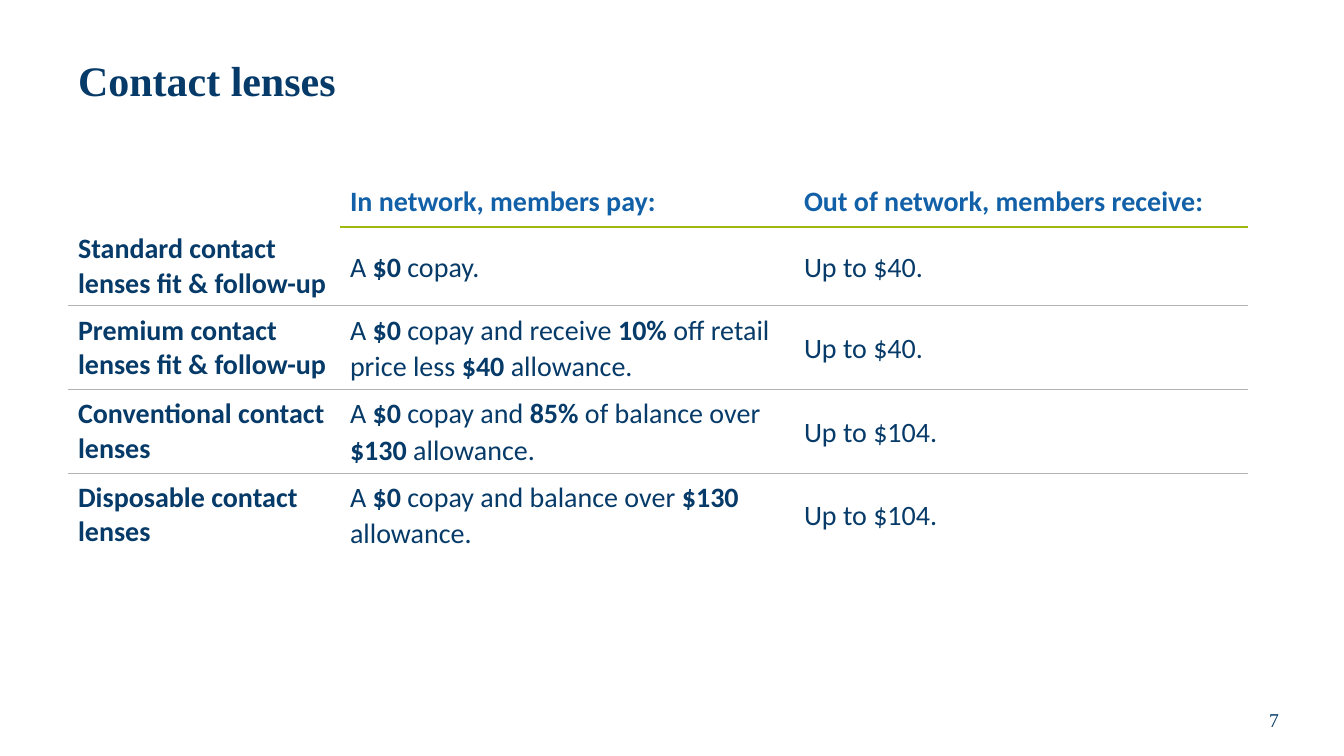
from lxml.etree import SubElement
from pptx import Presentation
from pptx.dml.color import RGBColor
from pptx.enum.text import MSO_ANCHOR as Anchor, PP_ALIGN as Align
from pptx.oxml import parse_xml
from pptx.oxml.ns import nsdecls, qn
from pptx.util import Emu, Pt

NAVY = RGBColor(0x06, 0x3A, 0x68)
BLUE = RGBColor(0x12, 0x60, 0xA7)
LIME = RGBColor(0xA0, 0xB8, 0x10)
GRAY = RGBColor(0xB2, 0xB2, 0xB2)
SERIF, SANS = "Times New Roman", "Calibri"
PLAIN = "{2D5ABB26-0587-4C30-8999-92F81FD0307C}"  # no style, no grid

TITLE = "Contact lenses"
PAGE = "7"
# Text between asterisks is bold.
ROWS = [
    ("", "*In network, members pay:*", "*Out of network, members receive:*"),
    ("*Standard contact lenses fit & follow-up*", "A *$0* copay.", "Up to $40."),
    ("*Premium contact lenses fit & follow-up*",
     "A *$0* copay and receive *10%* off retail price less *$40* allowance.",
     "Up to $40."),
    ("*Conventional contact lenses*",
     "A *$0* copay and *85%* of balance over *$130* allowance.",
     "Up to $104."),
    ("*Disposable contact lenses*",
     "A *$0* copay and balance over *$130* allowance.",
     "Up to $104."),
]
WIDTHS = (272, 454, 454)
HEIGHTS = (50, 78, 84, 83, 83)


def px(n):
    return Emu(round(n * 914400 / 100.8))


def style(para, face, size, color):
    font = para.font
    font.name, font.size, font.color.rgb = face, Pt(size), color


def rule(cell, side, color, width):
    """Draw a border on the "T" or "B" side of a cell."""
    line = parse_xml(f'<a:ln{side} {nsdecls("a")} w="{Pt(width)}"/>')
    fill = SubElement(line, qn("a:solidFill"))
    SubElement(fill, qn("a:srgbClr"), val=str(color))
    props = cell._tc.get_or_add_tcPr()
    props.insert(len(props.findall(qn("a:lnT"))), line)


def write(cell, text, color, space):
    cell.vertical_anchor = Anchor.MIDDLE
    cell.fill.background()
    para = cell.text_frame.paragraphs[0]
    para.line_spacing = space
    style(para, SANS, 20, color)
    for i, part in enumerate(text.split("*")):
        if part:
            run = para.add_run()
            run.text = part
            run.font.bold = i % 2 == 1


def add_grid(slide):
    table = slide.shapes.add_table(
        len(ROWS), len(WIDTHS), px(68), px(177),
        px(sum(WIDTHS)), px(sum(HEIGHTS))).table
    table._tbl.tblPr[0].text = PLAIN
    table.first_row = table.horz_banding = False
    for col, width in zip(table.columns, WIDTHS):
        col.width = px(width)
    for row, height in zip(table.rows, HEIGHTS):
        row.height = px(height)
    last = len(ROWS) - 1
    for r, row in enumerate(ROWS):
        for c, text in enumerate(row):
            cell = table.cell(r, c)
            write(cell, text, NAVY if r else BLUE, 1.07 if r and c else 1.0)
            edges = {"T": r, "B": r + 1}
            for side, edge in edges.items():
                if edge == 1 and c:
                    rule(cell, side, LIME, 2.25)
                elif 1 < edge <= last:
                    rule(cell, side, GRAY, 0.5)


def main():
    deck = Presentation()
    deck.slide_width, deck.slide_height = px(1344), px(756)
    slide = deck.slides.add_slide(deck.slide_layouts[5])

    title = slide.shapes.title
    title.left, title.top, title.width, title.height = map(px, (68, 25, 1210, 116))
    frame = title.text_frame
    frame.text = TITLE
    frame.vertical_anchor = Anchor.MIDDLE
    para = frame.paragraphs[0]
    para.alignment, para.line_spacing = Align.LEFT, 0.9
    style(para, SERIF, 30, NAVY)
    para.font.bold = True

    add_grid(slide)

    frame = slide.shapes.add_textbox(*map(px, (1215, 695, 118, 50))).text_frame
    frame.word_wrap = True
    frame.text = PAGE
    frame.vertical_anchor = Anchor.MIDDLE
    para = frame.paragraphs[0]
    para.alignment = Align.CENTER
    style(para, SERIF, 14, NAVY)

    deck.save("out.pptx")


if __name__ == "__main__":
    main()
